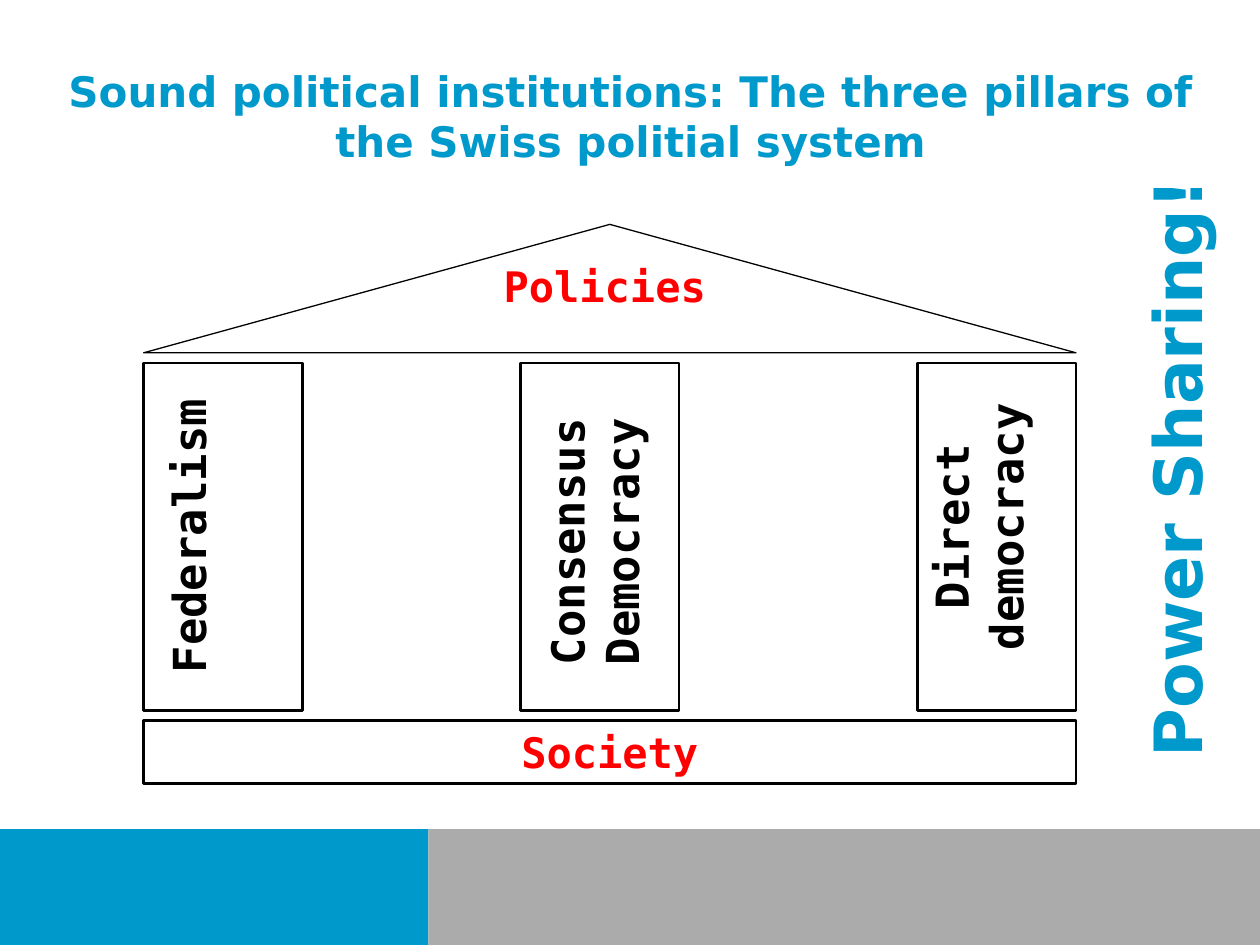
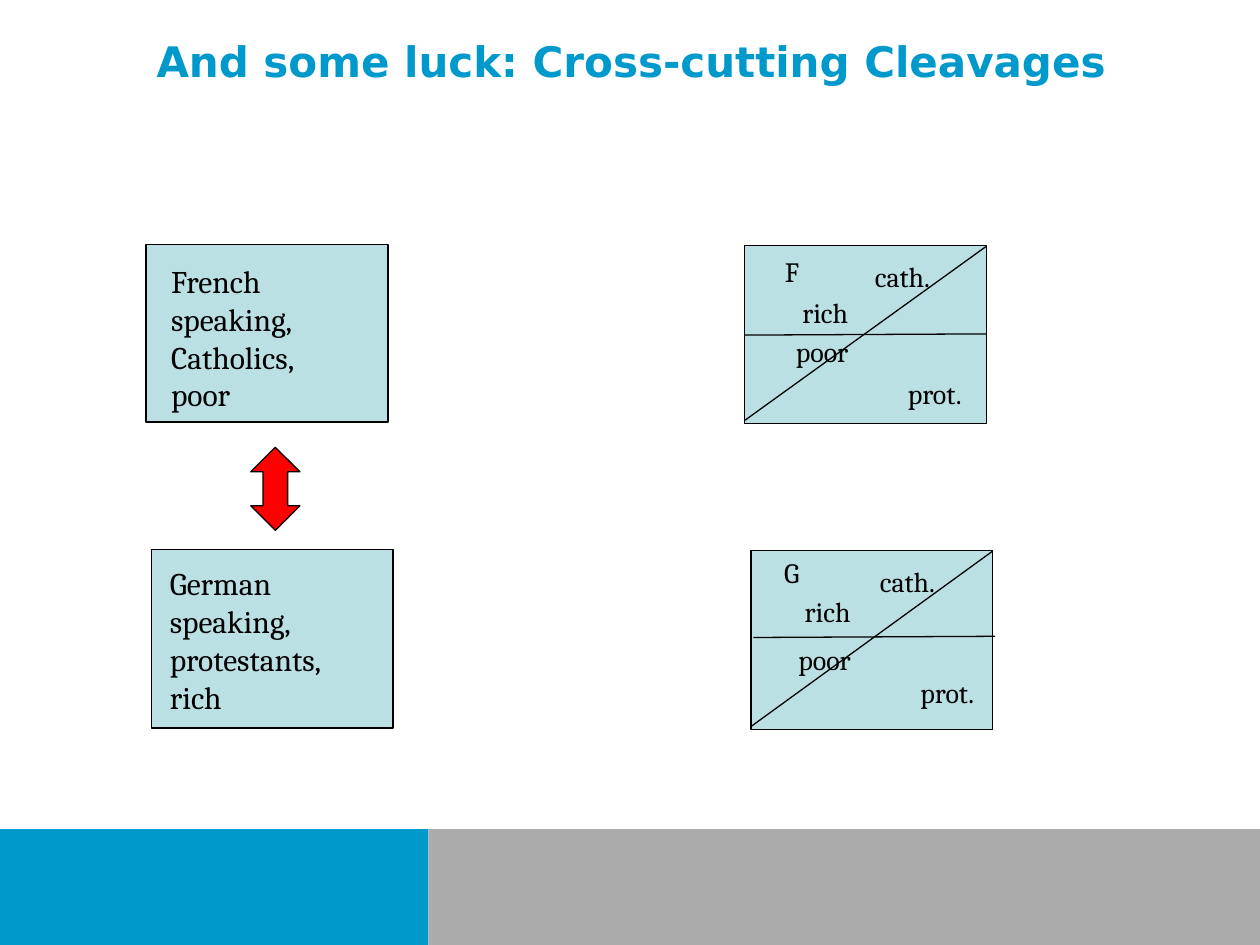
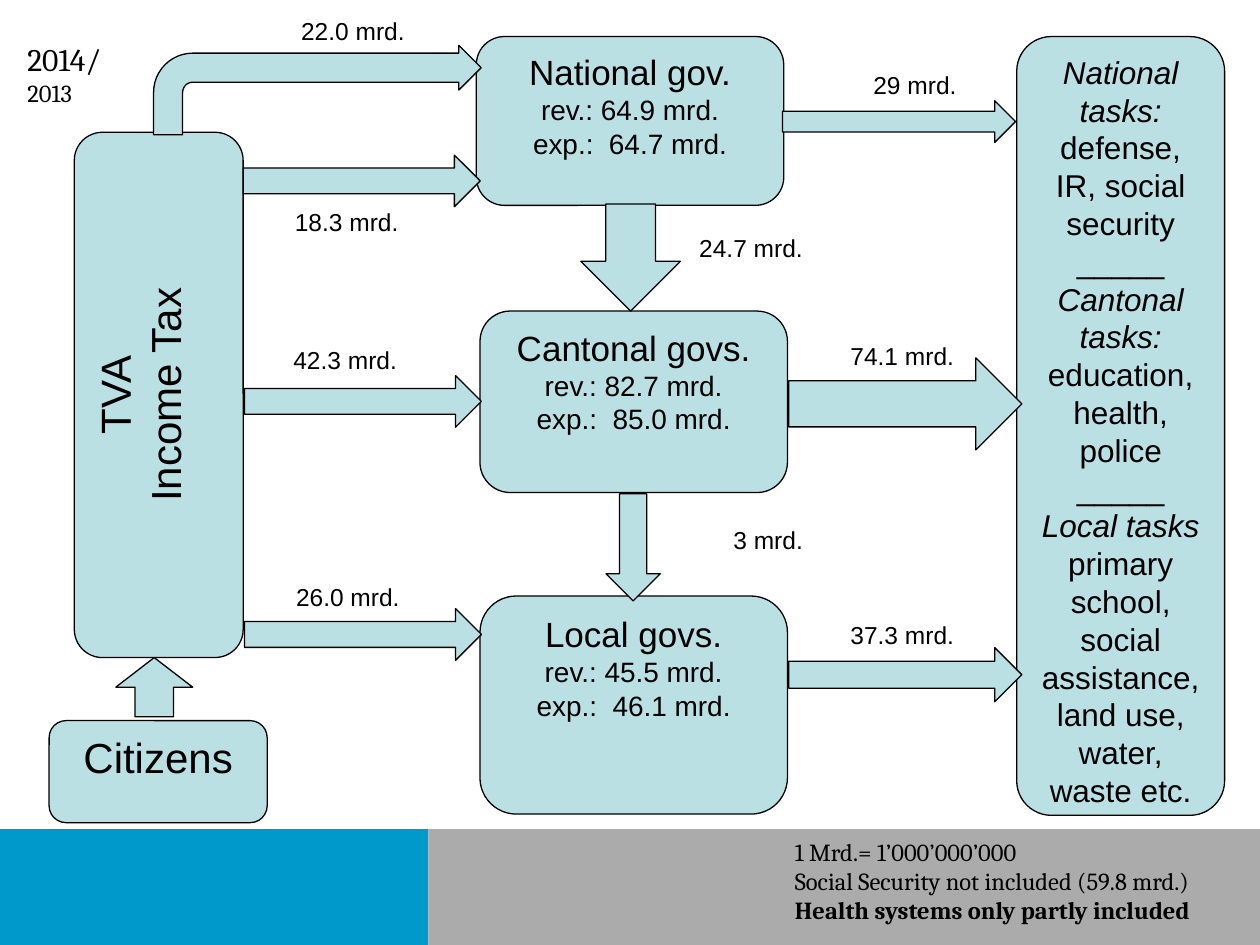
import dataclasses

import lxml.etree
import pptx
import pptx.dml.color
import pptx.enum.shapes
import pptx.enum.text
import pptx.oxml.ns
import pptx.util

Pt = pptx.util.Pt
SHAPE = pptx.enum.shapes.MSO_SHAPE
ALIGN = pptx.enum.text.PP_ALIGN


@dataclasses.dataclass(frozen=True)
class Style:
    font: str
    size: float
    color: str = "000000"
    bold: bool = False
    italic: bool = False
    align: int = ALIGN.CENTER


class Theme:
    black, white = "000000", "FFFFFF"
    blue, grey, red, pale = "0099CC", "ABABAB", "FF0000", "BBE0E3"
    thin, thick = 0.75, 1.5
    title = Style("DejaVu Sans", 24, blue, bold=True)
    motto = Style("DejaVu Sans", 38, blue, bold=True, align=ALIGN.LEFT)
    beam = Style("DejaVu Sans Mono", 24, red, bold=True)
    pillar = Style("DejaVu Sans Mono", 26, bold=True)
    group = Style("Cambria", 18, align=ALIGN.LEFT)
    cleavage = Style("Cambria", 16, align=ALIGN.RIGHT)
    note = Style("Cambria", 14, align=ALIGN.LEFT)
    strong_note = dataclasses.replace(note, bold=True)
    source = Style("Arial", 24)
    government = Style("Arial", 20)
    budget = Style("Arial", 16)
    task = Style("Arial", 18)
    task_heading = dataclasses.replace(task, italic=True)
    amount = Style("Arial", 14, align=ALIGN.RIGHT)


def rgb(color):
    return pptx.dml.color.RGBColor.from_string(color)


def points(box):
    return [Pt(length) for length in box]


def format_run(run, style):
    run.font.name = style.font
    run.font.size = Pt(style.size)
    run.font.bold = style.bold
    run.font.italic = style.italic
    run.font.color.rgb = rgb(style.color)


def write(shape, lines):
    """Fill a shape with (text, style) paragraphs, set from the top."""
    frame = shape.text_frame
    frame.word_wrap = True
    frame.vertical_anchor = pptx.enum.text.MSO_ANCHOR.TOP
    for index, (text, style) in enumerate(lines):
        paragraph = frame.add_paragraph() if index else frame.paragraphs[0]
        paragraph.text = text
        paragraph.alignment = style.align
        for run in paragraph.runs:
            format_run(run, style)


def add_label(slide, box, *lines, rotation=0):
    label = slide.shapes.add_textbox(*points(box))
    label.rotation = rotation
    write(label, lines)
    return label


def add_figure(slide, kind, box, *lines, fill=None, line=Theme.thin):
    figure = slide.shapes.add_shape(kind, *points(box))
    figure.shadow.inherit = False
    if fill:
        figure.fill.solid()
        figure.fill.fore_color.rgb = rgb(fill)
    else:
        figure.fill.background()
    if line:
        figure.line.color.rgb = rgb(Theme.black)
        figure.line.width = Pt(line)
    else:
        figure.line.fill.background()
    write(figure, lines)
    return figure


def add_line(slide, start, end):
    line = slide.shapes.add_connector(
        pptx.enum.shapes.MSO_CONNECTOR.STRAIGHT, *points(start + end))
    line.line.color.rgb = rgb(Theme.black)
    line.line.width = Pt(Theme.thin)
    lxml.etree.SubElement(line._element.spPr, pptx.oxml.ns.qn("a:effectLst"))


def add_banded_slide(deck):
    slide = deck.slides.add_slide(deck.slide_layouts[6])
    slide.background.fill.solid()
    slide.background.fill.fore_color.rgb = rgb(Theme.white)
    top, split = 473.8, 244.8
    for left, width, height, color in (
            (0, split, 66.2, Theme.blue),
            (split, 720 - split, 66.2, Theme.grey),
            (30.2, 174.2, 41.8, Theme.blue)):
        add_figure(slide, SHAPE.RECTANGLE, (left, top, width, height),
                   fill=color, line=None)
    return slide


def add_title(slide, box, text):
    add_label(slide, box, (text, Theme.title))


def add_house(slide, box):
    """Roof, three pillars and a base; each pillar text has its own centre."""
    left, top, width, height = box
    pillar_width, pillar_height, base_height = 90.7, 198.7, 36
    pillar_top = top + 79.2
    add_figure(slide, SHAPE.ISOSCELES_TRIANGLE, (left, top, width, 73.4))
    add_label(slide, (left + 169.9, top + 17.2, 187.2, 36),
              ("Policies", Theme.beam))
    for text, offset, center_x, center_y, length, depth in (
            ("Federalism", 0, 25.2, 99, 198.7, 38.2),
            ("Consensus Democracy", 215.3, 42.4, 102.2, 187.2, 70.6),
            ("Direct democracy", width - pillar_width, 35.2, 93.6,
             187.2, 70.6)):
        pillar_left = left + offset
        add_figure(slide, SHAPE.RECTANGLE,
                   (pillar_left, pillar_top, pillar_width, pillar_height),
                   line=Theme.thick)
        add_label(slide, (pillar_left + center_x - length / 2,
                          pillar_top + center_y - depth / 2, length, depth),
                  (text, Theme.pillar), rotation=270)
    add_figure(slide, SHAPE.RECTANGLE,
               (left, top + height - base_height, width, base_height),
               ("Society", Theme.beam), line=Theme.thick)


def add_pillars_slide(deck):
    slide = add_banded_slide(deck)
    add_title(slide, (20.9, 33.8, 679, 60.5),
              "Sound political institutions: The three pillars of "
              "the Swiss politial system")
    add_house(slide, (82.1, 128.2, 532.8, 319.6))
    motto = add_figure(slide, SHAPE.RECTANGLE, (494.6, 228.2, 362.9, 60.5),
                       ("Power Sharing!", Theme.motto),
                       fill=Theme.white, line=None)
    motto.rotation = 270


def add_group(slide, box, text_box, *texts):
    """A block of people; text_box is relative to the block."""
    add_figure(slide, SHAPE.RECTANGLE, box, fill=Theme.pale)
    dx, dy, width, height = text_box
    add_label(slide, (box[0] + dx, box[1] + dy, width, height),
              *((text, Theme.group) for text in texts))


def add_split_group(slide, box, divider, labels):
    """A block cut by a divider from (dx, dy) and by a rising diagonal."""
    left, top, width, height = box
    dx, dy = divider
    add_figure(slide, SHAPE.RECTANGLE, box, fill=Theme.pale)
    add_line(slide, (left + dx, top + dy),
             (left + dx + width, top + dy - 0.7))
    add_line(slide, (left, top + height - 1.6), (left + width, top + 0.3))
    for text, label_dx, label_dy, label_width in labels:
        add_label(slide, (left + label_dx, top + label_dy, label_width, 26.6),
                  (text, Theme.cleavage))


def add_cleavages_slide(deck):
    slide = add_banded_slide(deck)
    add_title(slide, (36.7, 16.6, 648, 90),
              "And some luck: Cross-cutting Cleavages")
    add_group(slide, (83.5, 139.7, 138.2, 101.5), (7.2, 6.5, 122.4, 94.3),
              "French speaking,", "Catholics,", "poor")
    add_group(slide, (86.4, 313.9, 138.2, 102.2), (3.6, 5, 131.8, 72.7),
              "German speaking, protestants, rich")
    add_split_group(slide, (425.5, 140.4, 138.2, 101.5), (0, 51.1), (
        ("F", 7.2, 1.4, 31), ("rich", 2.9, 25.2, 63.4),
        ("poor", 2.9, 47.5, 63.4), ("cath.", 50.4, 4.3, 62.6),
        ("prot.", 74.2, 71.3, 56.9)))
    add_split_group(slide, (429.1, 314.6, 138.2, 102.2), (1.4, 49.7), (
        ("G", 3.6, -0.7, 31), ("rich", 0.7, 21.6, 63.4),
        ("poor", 0.7, 49, 63.4), ("cath.", 49.7, 4.3, 62.6),
        ("prot.", 77.8, 67.7, 56.9)))
    conflict = add_figure(slide, SHAPE.UP_DOWN_ARROW,
                          (143.3, 255.6, 28.1, 47.5), fill=Theme.red)
    conflict.adjustments[0] = 0.5
    conflict.adjustments[1] = 0.5


def add_node(slide, box, *lines):
    return add_figure(slide, SHAPE.ROUNDED_RECTANGLE, box, *lines,
                      fill=Theme.pale)


def add_government(slide, box, name, revenue, expense):
    add_node(slide, box, (name, Theme.government),
             (f"rev.: {revenue} mrd.", Theme.budget),
             (f"exp.:  {expense} mrd.", Theme.budget))


def add_flow(slide, kind, box, amount=None, offset=(0, 0)):
    """A money arrow, with its amount placed at an offset from the arrow."""
    arrow = add_figure(slide, kind, box, fill=Theme.pale)
    if amount:
        add_label(slide, (box[0] + offset[0], box[1] + offset[1], 77.8, 24.5),
                  (f"{amount} mrd.", Theme.amount))
    return arrow


def add_flows(slide):
    tax_bend = add_flow(slide, SHAPE.BENT_ARROW, (87.8, 25.9, 187.2, 51.1),
                        "22.0", (72.8, -20.1))
    for index, value in enumerate((0.325, 0.25, 0.25, 0.438)):
        tax_bend.adjustments[index] = value
    for left, top, amount, offset in (
            (139, 88.6, "18.3", (18, 25.9)),
            (139.7, 214.6, "42.3", (16.5, -20.9)),
            (139.7, 347.8, "26.0", (18, -18.8))):
        add_flow(slide, SHAPE.RIGHT_ARROW, (left, top, 135.4, 29.5),
                 amount, offset)
    for left, top, height, amount, offset in (
            (447.1, 57.6, 23.8, "29", (28.8, -20.9)),
            (450.7, 204.5, 52.6, "74.1", (23.8, -13)),
            (450.7, 370.1, 31, "37.3", (23.8, -19.5))):
        add_flow(slide, SHAPE.RIGHT_ARROW, (left, top, 133.2, height),
                 amount, offset)
    add_flow(slide, SHAPE.DOWN_ARROW, (331.9, 116.6, 56.9, 61.2),
             "24.7", (56.2, 13))
    add_flow(slide, SHAPE.DOWN_ARROW, (346.3, 282.2, 31, 61.2),
             "3", (41.8, 14.4))
    add_flow(slide, SHAPE.UP_ARROW, (66.2, 375.8, 43.9, 33.8))


def add_tasks(slide, box):
    heading, body = Theme.task_heading, Theme.task
    add_node(slide, box,
             ("National tasks:", heading),
             ("defense, IR, social security", body),
             ("_____", body),
             ("Cantonal tasks:", heading),
             ("education, health, police", body),
             ("_____", body),
             ("Local tasks", heading),
             ("primary school,", body),
             ("social assistance, land use, water, waste etc.", body))


def add_finance_slide(deck):
    slide = add_banded_slide(deck)
    taxes = add_node(slide, (42.5, 75.6, 96.5, 300.2),
                     ("TVA", Theme.source), ("Income Tax", Theme.source))
    taxes.text_frame._txBody.bodyPr.set("vert", "vert270")
    add_tasks(slide, (581, 20.9, 118.8, 445))
    add_node(slide, (28.1, 411.8, 124.6, 58.3), ("Citizens", Theme.source))
    for left, top, height, name, revenue, expense in (
            (272.2, 20.9, 96.5, "National gov.", "64.9", "64.7"),
            (274.3, 177.8, 103.7, "Cantonal govs.", "82.7", "85.0"),
            (274.3, 340.6, 124.6, "Local govs.", "45.5", "46.1")):
        add_government(slide, (left, top, 175.7, height),
                       name, revenue, expense)
    add_flows(slide)
    add_label(slide, (447.1, 474.5, 270, 58.3),
              ("1 Mrd.= 1’000’000’000", Theme.note),
              ("Social Security not included (59.8 mrd.)", Theme.note),
              ("Health systems only partly included", Theme.strong_note))
    years = add_label(slide, (8.6, 19.4, 57.6, 46.1), ("2014/", Theme.group))
    earlier_year = years.text_frame.paragraphs[0].add_run()
    earlier_year.text = "2013"
    format_run(earlier_year, Theme.note)


def main():
    deck = pptx.Presentation()
    deck.slide_width, deck.slide_height = Pt(720), Pt(540)
    add_pillars_slide(deck)
    add_cleavages_slide(deck)
    add_finance_slide(deck)
    deck.save("out.pptx")


if __name__ == "__main__":
    main()
